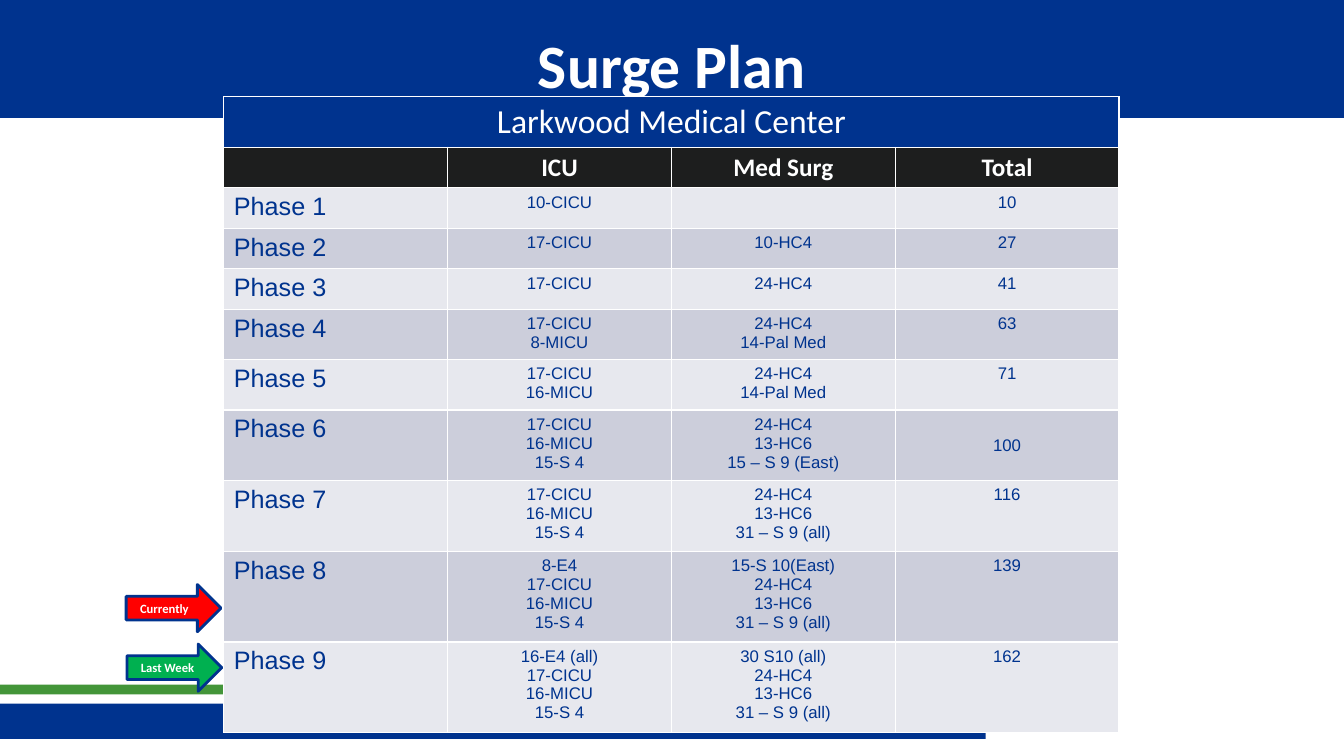
"""Build the hospital surge plan slide with its phase table and status arrows."""
from pptx import Presentation
from pptx import util as u
from pptx.dml.color import RGBColor
from pptx.enum import shapes, text

BLUE, GREEN, WHITE, BLACK = "00338E", "439539", "FFFFFF", "1D1E1E"
STRIPES = ["E7E8EE", "CCCEDB"]
TITLE = "Surge Plan"
CENTER_NAME = "Larkwood Medical Center"
HEADINGS = ["", "ICU", "Med Surg", "Total"]
PHASES = [
    (["10-CICU"], [], "10"),
    (["17-CICU"], ["10-HC4"], "27"),
    (["17-CICU"], ["24-HC4"], "41"),
    (["17-CICU", "8-MICU"], ["24-HC4", "14-Pal Med"], "63"),
    (["17-CICU", "16-MICU"], ["24-HC4", "14-Pal Med"], "71"),
    (["17-CICU", "16-MICU", "15-S 4"], ["24-HC4", "13-HC6", "15 – S 9 (East)"], "100"),
    (["17-CICU", "16-MICU", "15-S 4"], ["24-HC4", "13-HC6", "31 – S 9 (all)"], "116"),
    (["8-E4", "17-CICU", "16-MICU", "15-S 4"],
     ["15-S 10(East)", "24-HC4", "13-HC6", "31 – S 9 (all)"], "139"),
    (["16-E4 (all)", "17-CICU", "16-MICU", "15-S 4"],
     ["30 S10 (all)", "24-HC4", "13-HC6", "31 – S 9 (all)"], "162"),
]
CENTERED_TOTAL = "100"
BARS = [
    (-0.08, 17.73, 24.92, 0.89, BLUE),
    (-0.08, 17.25, 24.92, 0.25, GREEN),
    (0, 0, 33.87, 2.97, BLUE),
]
ARROWS = [
    ("Currently", 3.18, 14.73, 1.75, "FF0000"),
    ("Last Week", 3.2, 16.23, 1.88, "00B050"),
]
COLUMN_WIDTH = 5.64
CENTER, LEFT = text.PP_ALIGN.CENTER, text.PP_ALIGN.LEFT


def paint(target, color):
    target.fill.solid()
    target.fill.fore_color.rgb = RGBColor.from_string(color)


def write(frame, words, font, size, color, bold=False, align=CENTER):
    frame.text = words
    for paragraph in frame.paragraphs:
        paragraph.alignment = align
        paragraph.font.name = font
        paragraph.font.size = u.Pt(size)
        paragraph.font.bold = bold
        paragraph.font.color.rgb = RGBColor.from_string(color)


def add_shape(parent, kind, box, color):
    shape = parent.shapes.add_shape(kind, *map(u.Cm, box))
    shape.shadow.inherit = False
    paint(shape, color)
    shape.line.fill.background()
    return shape


def add_table(slide):
    heights = [1.24, 1.02] + [max(1.02, 0.51 * len(icu) + 0.23) for icu, _, _ in PHASES]
    frame = slide.shapes.add_table(
        len(heights), len(HEADINGS), u.Cm(5.64), u.Cm(2.44),
        u.Cm(COLUMN_WIDTH * len(HEADINGS)), u.Cm(sum(heights)))
    table = frame.table
    for row, height in zip(table.rows, heights):
        row.height = u.Cm(height)

    banner = table.cell(0, 0)
    banner.merge(table.cell(0, len(HEADINGS) - 1))
    paint(banner, BLUE)
    write(banner.text_frame, CENTER_NAME, "Calibri", 24, WHITE)

    for column, heading in enumerate(HEADINGS):
        cell = table.cell(1, column)
        paint(cell, BLACK)
        write(cell.text_frame, heading, "Calibri", 18, WHITE, bold=True)

    for index, (icu, med_surg, total) in enumerate(PHASES):
        entries = [f"Phase {index + 1}", "\n".join(icu), "\n".join(med_surg), total]
        for column, entry in enumerate(entries):
            cell = table.cell(index + 2, column)
            paint(cell, STRIPES[index % 2])
            size, align = (12, CENTER) if column else (18, LEFT)
            write(cell.text_frame, entry, "Arial", size, BLUE, align=align)
            if entry == CENTERED_TOTAL:
                cell.vertical_anchor = text.MSO_ANCHOR.MIDDLE


def add_arrow(slide, label, left, top, label_width, color):
    group = slide.shapes.add_group_shape()
    arrow = add_shape(group, shapes.MSO_SHAPE.RIGHT_ARROW, (left, top, 2.39, 1.19), color)
    arrow.line.color.rgb = RGBColor.from_string(BLUE)
    arrow.line.width = u.Pt(2)
    box = group.shapes.add_textbox(
        u.Cm(left + 0.1), u.Cm(top + 0.28), u.Cm(label_width), u.Cm(0.64))
    box.text_frame.word_wrap = False
    write(box.text_frame, label, "Calibri", 9, WHITE, bold=True, align=LEFT)


def main():
    presentation = Presentation()
    presentation.slide_width, presentation.slide_height = u.Cm(33.87), u.Cm(19.05)
    slide = presentation.slides.add_slide(presentation.slide_layouts[6])
    for *box, color in BARS:
        add_shape(slide, shapes.MSO_SHAPE.RECTANGLE, box, color)

    title = slide.shapes.add_textbox(u.Cm(1.7), u.Cm(0.43), u.Cm(30.48), u.Cm(2.34))
    title.text_frame.word_wrap = True
    title.text_frame.vertical_anchor = text.MSO_ANCHOR.MIDDLE
    write(title.text_frame, TITLE, "Calibri", 44, WHITE, bold=True)

    add_table(slide)
    for arrow in ARROWS:
        add_arrow(slide, *arrow)
    presentation.save("out.pptx")


if __name__ == "__main__":
    main()
